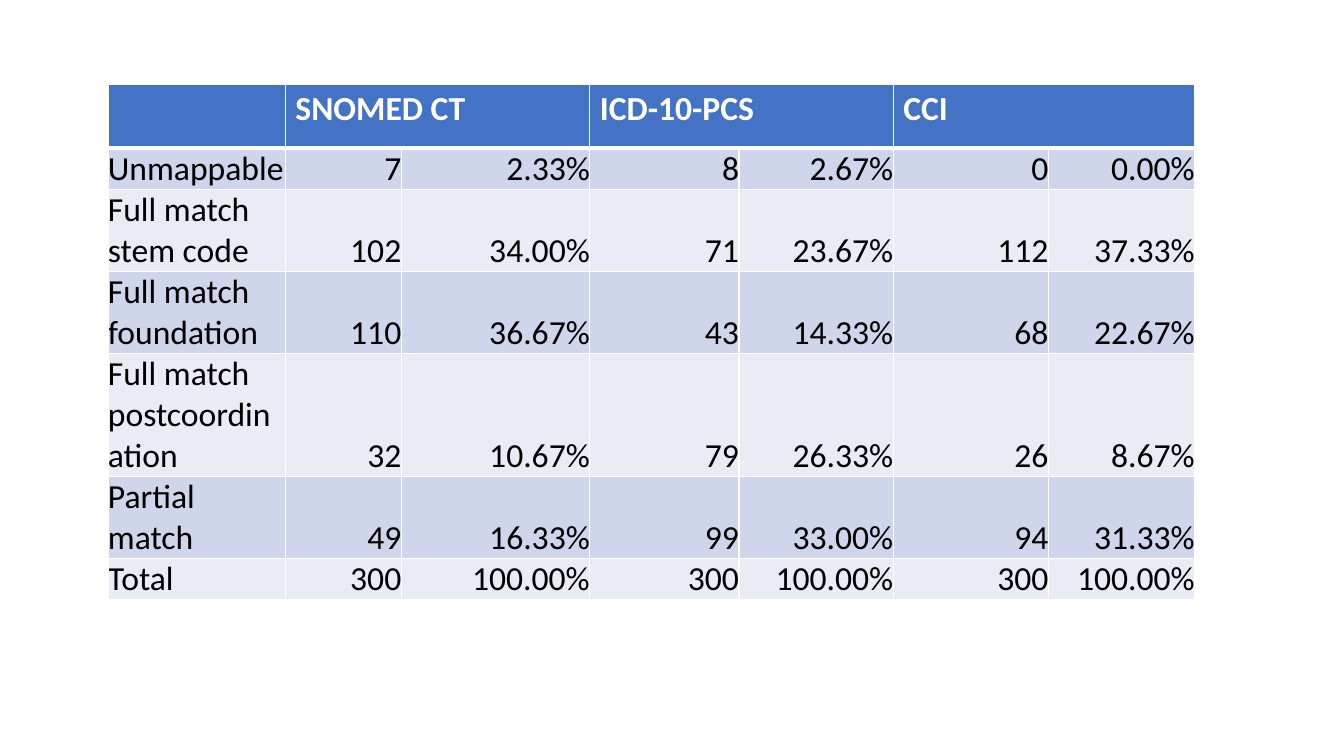
import dataclasses

import lxml.etree
import pptx
import pptx.dml.color
import pptx.enum.text
import pptx.oxml.ns
import pptx.util


@dataclasses.dataclass(frozen=True)
class Theme:
    font: str = "Calibri"
    text_size: int = 24
    header_fill: str = "4472C4"
    header_text: str = "FFFFFF"
    body_text: str = "000000"
    bands: tuple = ("CFD5EA", "E9EBF5")
    rule: str = "FFFFFF"
    thin_rule: int = 1
    thick_rule: int = 3


# Lengths are percentages of the slide's width or height.
TABLE_LEFT, TABLE_TOP = 8.03, 11.11
COLUMN_WIDTHS = (13.2, 8.63, 14.03, 11.1, 11.48, 11.55, 10.88)
HEADER_HEIGHT, LINE_HEIGHT = 8.5, 5.43

SYSTEMS = ("SNOMED CT", "ICD-10-PCS", "CCI")
# Outcome, lines of text in its label, count for each system
OUTCOMES = (
    ("Unmappable", 1, (7, 8, 0)),
    ("Full match stem code", 2, (102, 71, 112)),
    ("Full match foundation", 2, (110, 43, 68)),
    ("Full match postcoordination", 3, (32, 79, 26)),
    ("Partial match", 2, (49, 99, 94)),
)


class Page:
    def __init__(self, deck, theme):
        self.deck = deck
        self.theme = theme
        self.slide = deck.slides.add_slide(deck.slide_layouts[6])

    def across(self, percent):
        return round(self.deck.slide_width * percent / 100)

    def down(self, percent):
        return round(self.deck.slide_height * percent / 100)

    def table(self, left, top, widths, heights):
        frame = self.slide.shapes.add_table(
            len(heights), len(widths), self.across(left), self.down(top),
            self.across(sum(widths)), self.down(sum(heights)))
        table = frame.table
        table.horz_banding = False
        for column, width in zip(table.columns, widths):
            column.width = self.across(width)
        for row, height in zip(table.rows, heights):
            row.height = self.down(height)
        return table

    def borders(self, cell, top, bottom):
        """Rule all four sides; must run before the cell is filled."""
        properties = cell._tc.get_or_add_tcPr()
        thin = self.theme.thin_rule
        for side, width in (("L", thin), ("R", thin), ("T", top), ("B", bottom)):
            line = lxml.etree.SubElement(
                properties, pptx.oxml.ns.qn(f"a:ln{side}"), w=str(pptx.util.Pt(width)))
            solid = lxml.etree.SubElement(line, pptx.oxml.ns.qn("a:solidFill"))
            lxml.etree.SubElement(
                solid, pptx.oxml.ns.qn("a:srgbClr"), val=self.theme.rule)

    def text(self, cell, words, colour, bold):
        cell.text_frame.text = words
        paragraph = cell.text_frame.paragraphs[0]
        for span in paragraph.runs:
            span.font.name = self.theme.font
            span.font.size = pptx.util.Pt(self.theme.text_size)
            span.font.bold = bold
            span.font.color.rgb = pptx.dml.color.RGBColor.from_string(colour)
        return paragraph

    def fill(self, cell, colour):
        cell.fill.solid()
        cell.fill.fore_color.rgb = pptx.dml.color.RGBColor.from_string(colour)

    def header_cell(self, cell, words):
        self.borders(cell, self.theme.thin_rule, self.theme.thick_rule)
        self.fill(cell, self.theme.header_fill)
        self.text(cell, words, self.theme.header_text, True)

    def body_cell(self, cell, words, row, column):
        theme = self.theme
        self.borders(cell, theme.thick_rule if row == 1 else theme.thin_rule,
                     theme.thin_rule)
        self.fill(cell, theme.bands[(row - 1) % 2])
        cell.margin_left = cell.margin_right = 0
        cell.margin_top = cell.margin_bottom = 0
        cell.vertical_anchor = pptx.enum.text.MSO_ANCHOR.BOTTOM
        paragraph = self.text(cell, words, theme.body_text, False)
        if column:
            paragraph.alignment = pptx.enum.text.PP_ALIGN.RIGHT


def main():
    deck = pptx.Presentation()
    deck.slide_width = pptx.util.Inches(13.33)
    deck.slide_height = pptx.util.Inches(7.5)
    page = Page(deck, Theme())

    totals = tuple(map(sum, zip(*(counts for _, _, counts in OUTCOMES))))
    records = (*OUTCOMES, ("Total", 1, totals))
    heights = [HEADER_HEIGHT] + [LINE_HEIGHT * lines for _, lines, _ in records]
    table = page.table(TABLE_LEFT, TABLE_TOP, COLUMN_WIDTHS, heights)

    headings = [""]
    for system in SYSTEMS:
        headings += [system, ""]
    for column, heading in enumerate(headings):
        page.header_cell(table.cell(0, column), heading)
    for column in range(1, len(headings), 2):
        table.cell(0, column).merge(table.cell(0, column + 1))

    for row, (outcome, _, counts) in enumerate(records, start=1):
        values = [outcome]
        for count, total in zip(counts, totals):
            values += [str(count), f"{count / total:.2%}"]
        for column, value in enumerate(values):
            page.body_cell(table.cell(row, column), value, row, column)

    deck.save("out.pptx")


if __name__ == "__main__":
    main()
